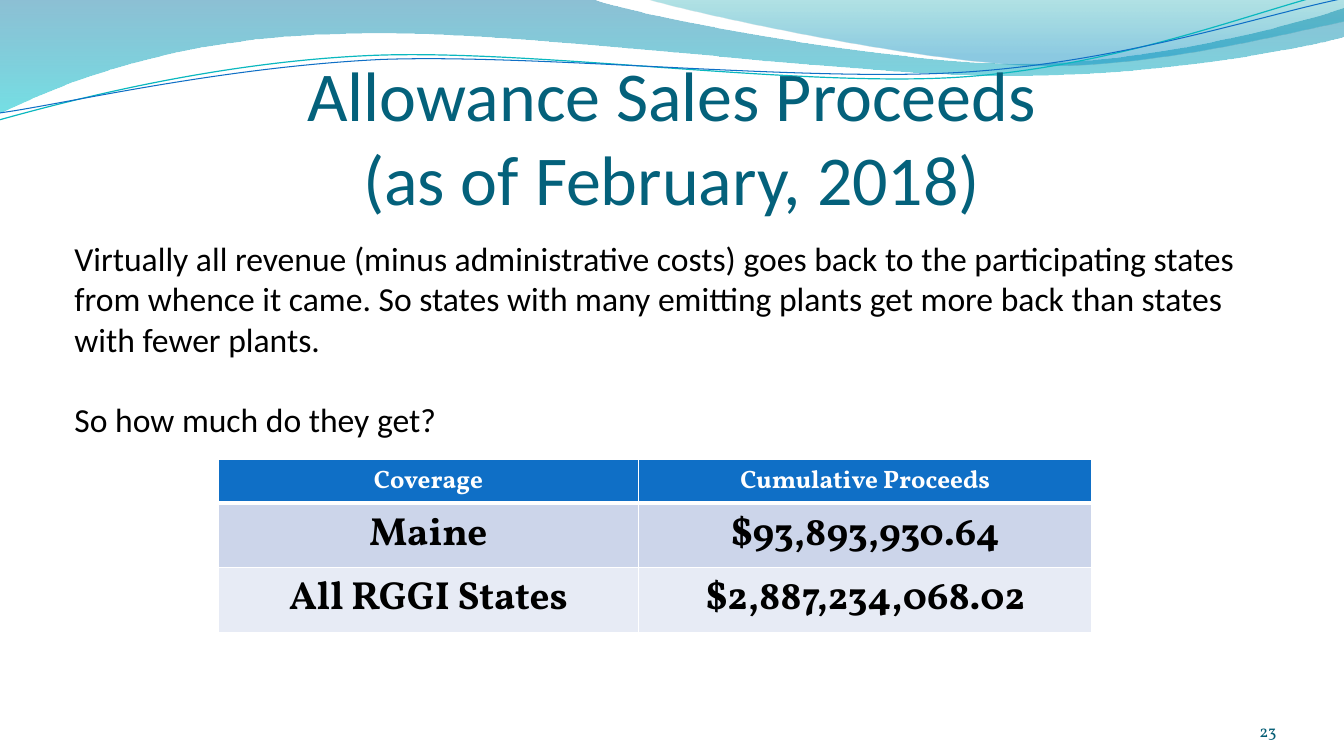
"""Build the slide on allowance sales proceeds."""
from pptx import Presentation
from pptx.dml.color import RGBColor
from pptx.enum.text import MSO_ANCHOR as Anchor, PP_ALIGN as Align
from pptx.oxml import parse_xml
from pptx.oxml.ns import nsdecls
from pptx.util import Inches, Pt

WHITE = RGBColor(0xFF, 0xFF, 0xFF)
BLACK = RGBColor(0x00, 0x00, 0x00)
TITLE_TEAL = RGBColor(0x04, 0x61, 0x7B)
NUMBER_TEAL = RGBColor(0x04, 0x5D, 0x75)
BLUE = RGBColor(0x0F, 0x6F, 0xC6)
TURQUOISE = RGBColor(0x0A, 0xB8, 0xBF)
ROW_DARK = RGBColor(0xCC, 0xD5, 0xEA)
ROW_LIGHT = RGBColor(0xE7, 0xEB, 0xF5)
BAND_TOP = RGBColor(0x00, 0x74, 0xA1)
BAND_BOTTOM = RGBColor(0x00, 0xC6, 0xCF)
CORNER_TOP = RGBColor(0x00, 0xA1, 0xA9)
CORNER_BOTTOM = RGBColor(0x00, 0x8B, 0xBF)

COLUMNS, ROWS = 80, 45
WIDTH, HEIGHT = Inches(13.333), Inches(7.5)
SANS, SERIF = "Calibri", "Vollkorn"

BAND = [
    [(0, 0)], [(35.2, -0.06)],
    [(38, 1), (53.1, 3.8), (60.7, 3.8)],
    [(68.3, 3.8), (76.7, 1.6), (80, 0.5)],
    [(80.1, 2.2)],
    [(78.7, 2.6), (69.6, 4.6), (59.6, 4.5)],
    [(49.7, 4.5), (30.5, 1.7), (20.6, 2.04)],
    [(10.3, 2.2), (3.7, 5), (-0.06, 6.78)],
]
CORNER = [
    [(38.34, -0.06)],
    [(40.7, 0.7), (54.5, 3.7), (61.5, 3.9)],
    [(68.5, 4.1), (76.9, 1.9), (80, 1.3)],
    [(80, 0)],
]
TURQUOISE_WAVE = [
    [(-0.06, 7.14)],
    [(3.84, 6.06), (12.7, 3.7), (22.1, 3.3)],
    [(31.6, 2.9), (47.4, 5.2), (57, 4.6)],
    [(66.6, 4), (75.1, 0.5), (79.9, -0.6)],
]
BLUE_WAVE = [
    [(0, 6.72)],
    [(3.8, 6.2), (13.1, 4), (22.7, 3.54)],
    [(32.2, 3.2), (47.8, 4.9), (57.3, 4.3)],
    [(66.9, 3.7), (75.3, 0.84), (80, -0.1)],
]
PROCEEDS = [
    ("Coverage", "Cumulative Proceeds"),
    ("Maine", "$93,893,930.64"),
    ("All RGGI States", "$2,887,234,068.02"),
]
EXPLANATION = [
    "Virtually all revenue (minus administrative costs) goes back to the "
    "participating states from whence it came. So states with many emitting "
    "plants get more back than states with fewer plants.",
    "So how much do they get?",
]


def col(count):
    return round(WIDTH * count / COLUMNS)


def row(count):
    return round(HEIGHT * count / ROWS)


def add_outline(slide, segments, close):
    """Add an outline of straight (one point) and cubic (three points) segments."""
    start, *others = [(col(x), row(y)) for segment in segments for x, y in segment]
    builder = slide.shapes.build_freeform(*start)
    builder.add_line_segments(others, close=close)
    outline = builder.convert_to_shape()
    outline.shadow.inherit = False
    outline.fill.background()
    steps = iter(outline.element.findall(".//{*}lnTo"))
    for segment in segments[1:]:
        sides = [next(steps) for _ in segment]
        if len(sides) == 3:
            curve = parse_xml(f'<a:cubicBezTo {nsdecls("a")}/>')
            sides[0].addprevious(curve)
            for side in sides:
                curve.append(side[0])
                side.getparent().remove(side)
    return outline


def add_wash(slide, segments, stops):
    """Add a see-through area; stops are (position %, colour, opacity %)."""
    wash = add_outline(slide, segments, True)
    wash.line.fill.background()
    marks = "".join(
        f'<a:gs pos="{place * 1000}"><a:srgbClr val="{color}">'
        f'<a:alpha val="{opacity * 1000}"/></a:srgbClr></a:gs>'
        for place, color, opacity in stops)
    gradient = parse_xml(
        f'<a:gradFill {nsdecls("a")} rotWithShape="1"><a:gsLst>{marks}</a:gsLst>'
        '<a:lin ang="5400000" scaled="0"/></a:gradFill>')
    properties = wash.element.spPr
    properties.replace(properties.find("{*}noFill"), gradient)


def add_wave(slide, segments, color, thickness):
    wave = add_outline(slide, segments, False)
    wave.line.color.rgb = color
    wave.line.width = Pt(thickness)


def style(paragraph, font_name, size, color, align, bold=False):
    paragraph.alignment = align
    font = paragraph.font
    font.name, font.size, font.bold = font_name, Pt(size), bold
    font.color.rgb = color


def add_text(slide, place, texts, font_name, size, color, align=Align.LEFT,
             anchor=Anchor.TOP, insets=(0.1, 0.05, 0.1, 0.05), gap=0):
    x, y, width, height = place
    frame = slide.shapes.add_textbox(col(x), row(y), col(width), row(height)).text_frame
    frame.word_wrap = True
    frame.vertical_anchor = anchor
    (frame.margin_left, frame.margin_top,
     frame.margin_right, frame.margin_bottom) = map(Inches, insets)
    for index, text in enumerate(texts):
        paragraph = frame.add_paragraph() if index else frame.paragraphs[0]
        paragraph.text = text
        style(paragraph, font_name, size, color, align)
        if index:
            paragraph.space_before = Pt(gap)


def set_borders(cell, bottom):
    properties = cell._tc.get_or_add_tcPr()
    for index, (side, width) in enumerate(zip("LRTB", (1, 1, 1, bottom))):
        properties.insert(index, parse_xml(
            f'<a:ln{side} {nsdecls("a")} w="{Pt(width)}"><a:solidFill>'
            f'<a:srgbClr val="{WHITE}"/></a:solidFill></a:ln{side}>'))


def add_proceeds(slide, x, y, widths, heights):
    table = slide.shapes.add_table(
        len(heights), len(widths), col(x), row(y),
        col(sum(widths)), row(sum(heights))).table
    for column, width in zip(table.columns, widths):
        column.width = col(width)
    looks = [(BLUE, WHITE, 18, 3), (ROW_DARK, BLACK, 28, 1), (ROW_LIGHT, BLACK, 28, 1)]
    for line, height, texts, (fill, color, size, bottom) in zip(
            table.rows, heights, PROCEEDS, looks):
        line.height = row(height)
        for cell, text in zip(line.cells, texts):
            cell.text = text
            cell.fill.solid()
            cell.fill.fore_color.rgb = fill
            style(cell.text_frame.paragraphs[0], SERIF, size, color, Align.CENTER, True)
            set_borders(cell, bottom)


def main():
    deck = Presentation()
    deck.slide_width, deck.slide_height = WIDTH, HEIGHT
    slide = deck.slides.add_slide(deck.slide_layouts[6])
    add_wash(slide, BAND, [(0, BAND_TOP, 45), (100, BAND_BOTTOM, 55)])
    add_wash(slide, CORNER, [(0, CORNER_TOP, 30), (80, CORNER_BOTTOM, 45)])
    add_wave(slide, TURQUOISE_WAVE, TURQUOISE, 0.85)
    add_wave(slide, BLUE_WAVE, BLUE, 0.75)
    add_text(slide, (13, 0.9, 54, 12.15),
             ["Allowance Sales Proceeds\v(as of February, 2018)"],
             SANS, 50, TITLE_TEAL, Align.CENTER, Anchor.BOTTOM, (0, 0.05, 0, 0))
    add_proceeds(slide, 13, 27.33, (25, 27), (2.62, 3.84, 3.84))
    add_text(slide, (3.84, 13.86, 70.3, 12.7), EXPLANATION, SANS, 24, BLACK, gap=29)
    add_text(slide, (69.36, 41.7, 6.62, 2.4), ["23"], SERIF, 12, NUMBER_TEAL,
             Align.RIGHT, Anchor.BOTTOM, (0, 0, 0, 0))
    deck.save("out.pptx")


if __name__ == "__main__":
    main()
